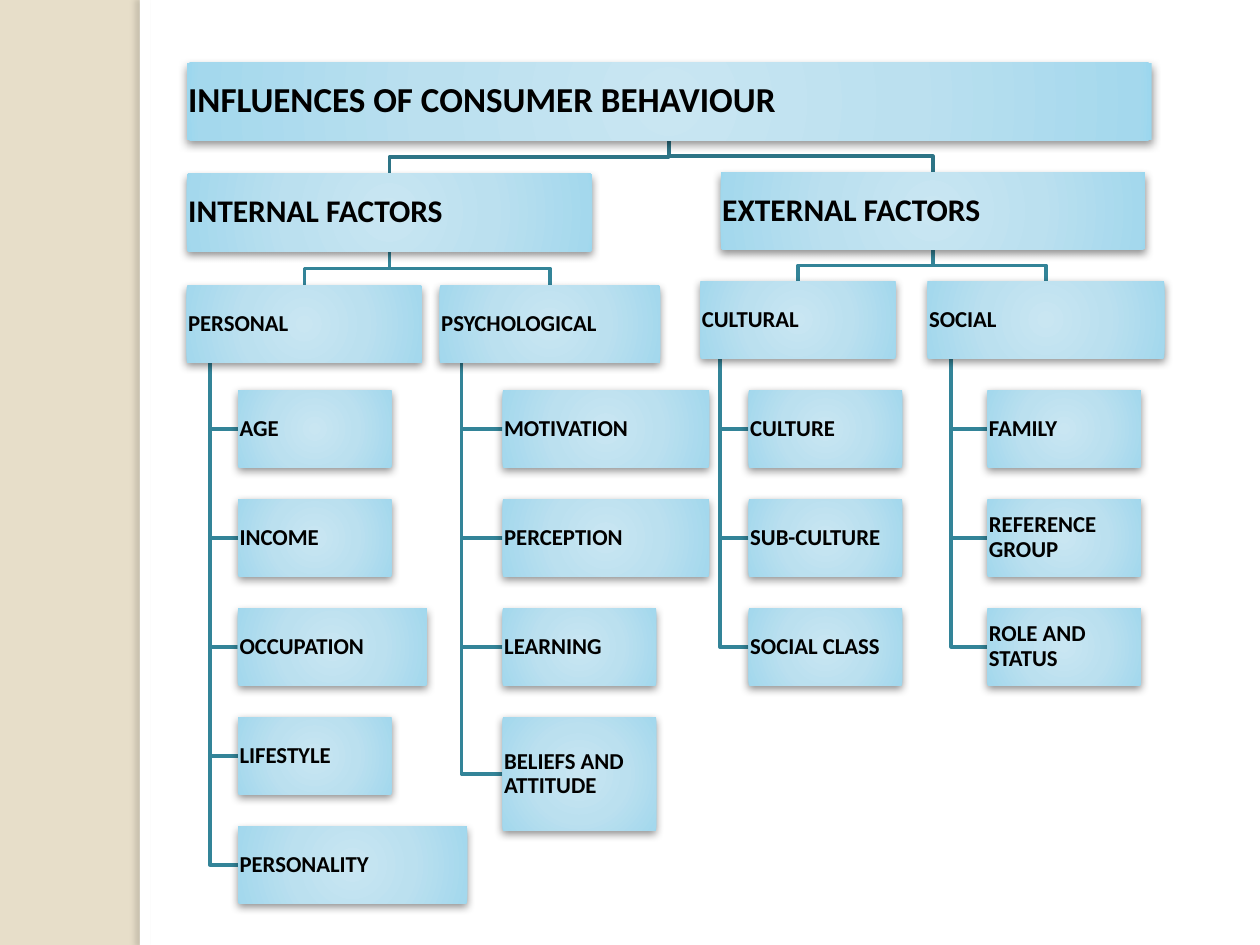
from pptx import Presentation
from pptx.dml.color import RGBColor
from pptx.enum.shapes import MSO_SHAPE
from pptx.enum.text import MSO_ANCHOR, PP_ALIGN
from pptx.oxml import parse_xml
from pptx.oxml.ns import nsdecls
from pptx.util import Pt

RECT = MSO_SHAPE.RECTANGLE
MIDDLE = MSO_ANCHOR.MIDDLE
LEFT = PP_ALIGN.LEFT

SAND = RGBColor(0xE7, 0xDE, 0xC9)
WHITE = RGBColor(0xFF, 0xFF, 0xFF)
BLACK = RGBColor(0x00, 0x00, 0x00)
STONE = RGBColor(0x73, 0x6F, 0x63)
TEAL = RGBColor(0x33, 0x84, 0x98)
DEEP = RGBColor(0x2D, 0x74, 0x86)
GLOW = [
    (0, RGBColor(0xC9, 0xE6, 0xF2)),
    (50, RGBColor(0xBB, 0xE0, 0xEF)),
    (97, RGBColor(0xA4, 0xD8, 0xED)),
    (100, RGBColor(0x9B, 0xD7, 0xEE)),
]

HIGH = 44.1       # height of a box
WIDE = 87.8       # usual width of a leaf
ROW, STEP = 223, 62.3

TOP = ("INFLUENCES OF CONSUMER BEHAVIOUR", 106.6, 36, 551.5)
# Group: text, left, top, width, heads
# Head: text, left, top, width, left of leaves, leaves
# Leaf: text, width, height
GROUPS = [
    ("INTERNAL FACTORS", 106.6, 99.4, 231.8, [
        ("PERSONAL", 106.6, 163.2, 134.6, 136, [
            ("AGE", WIDE, HIGH),
            ("INCOME", WIDE, HIGH),
            ("OCCUPATION", 108, HIGH),
            ("LIFESTYLE", WIDE, HIGH),
            ("PERSONALITY", 131, HIGH),
        ]),
        ("PSYCHOLOGICAL", 251.2, 163.2, 126, 287.2, [
            ("MOTIVATION", 118.1, HIGH),
            ("PERCEPTION", 118.1, HIGH),
            ("LEARNING", WIDE, HIGH),
            ("BELIEFS AND ATTITUDE", WIDE, 64.8),
        ]),
    ]),
    ("EXTERNAL FACTORS", 411.8, 98.5, 242.5, [
        ("CULTURAL", 400.2, 160.6, 111.6, 427.8, [
            ("CULTURE", WIDE, HIGH),
            ("SUB-CULTURE", WIDE, HIGH),
            ("SOCIAL CLASS", WIDE, HIGH),
        ]),
        ("SOCIAL", 530, 160.6, 135.4, 564.2, [
            ("FAMILY", WIDE, HIGH),
            ("REFERENCE GROUP", WIDE, HIGH),
            ("ROLE AND STATUS", WIDE, HIGH),
        ]),
    ]),
]


def cast(shape, color, alpha, blur, dist, angle):
    """Give the shape an outer shadow; alpha in percent, angle in degrees."""
    shape.shadow.inherit = False
    shape._element.spPr.find("{*}effectLst").append(parse_xml(
        f'<a:outerShdw {nsdecls("a")} blurRad="{Pt(blur)}" dist="{Pt(dist)}" '
        f'dir="{angle * 60000}" algn="ctr" rotWithShape="0">'
        f'<a:srgbClr val="{color}"><a:alpha val="{alpha * 1000}"/></a:srgbClr>'
        '</a:outerShdw>'))


def route(points, color):
    """Draw an open line through the points."""
    spots = [(Pt(x), Pt(y)) for x, y in points]
    pen = shapes.build_freeform(*spots[0])
    pen.add_line_segments(spots[1:], close=False)
    line = pen.convert_to_shape()
    line.fill.background()
    line.line.color.rgb = color
    line.line.width = Pt(2)
    line.shadow.inherit = False


deck = Presentation()
deck.slide_width, deck.slide_height = Pt(720), Pt(540)
slide = deck.slides.add_slide(deck.slide_layouts[6])
shapes = slide.shapes
slide.background.fill.solid()
slide.background.fill.fore_color.rgb = SAND

# White page with a shaded left edge
for width in (640, 5.8):
    page = shapes.add_shape(RECT, Pt(80), 0, Pt(width), Pt(540))
    page.fill.solid()
    page.fill.fore_color.rgb = WHITE
    page.line.fill.background()
    page.shadow.inherit = False
cast(page, STONE, 25, 3, 3, 180)

# Lines go behind the boxes, which are gathered on the way
text, left, top, width = TOP
boxes = [(text, left, top, width, HIGH, 20)]
root, base = left + width / 2, top + HIGH
for text, left, top, width, heads in GROUPS:
    boxes.append((text, left, top, width, HIGH, 18))
    mid, foot = left + width / 2, top + HIGH
    bend = (base + top) / 2
    route([(root, base), (root, bend), (mid, bend), (mid, top)], DEEP)
    for text, left, top, width, inset, leaves in heads:
        boxes.append((text, left, top, width, HIGH, 13))
        bend, end = (foot + top) / 2, left + width / 2
        route([(mid, foot), (mid, bend), (end, bend), (end, top)], TEAL)
        trunk = left + width / 10
        for i, (text, wide, high) in enumerate(leaves):
            row = ROW + i * STEP
            boxes.append((text, inset, row, wide, high, 13))
            y = row + high / 2
            route([(trunk, top + HIGH), (trunk, y), (inset, y)], TEAL)

stops = "".join(f'<a:gs pos="{pos * 1000}"><a:srgbClr val="{color}"/></a:gs>'
                for pos, color in GLOW)
for text, left, top, width, high, size in boxes:
    box = shapes.add_shape(RECT, Pt(left), Pt(top), Pt(width), Pt(high))
    box.line.fill.background()
    box._element.spPr.insert(2, parse_xml(
        f'<a:gradFill {nsdecls("a")} rotWithShape="1"><a:gsLst>{stops}</a:gsLst>'
        '<a:path path="circle"><a:fillToRect l="50000" t="50000" r="50000" '
        'b="50000"/></a:path></a:gradFill>'))
    cast(box, BLACK, 43, 5, 2, 90)
    frame = box.text_frame
    frame.word_wrap = True
    frame.vertical_anchor = MIDDLE
    frame.margin_left = frame.margin_right = Pt(0.9)
    frame.margin_top = frame.margin_bottom = Pt(0.9)
    para = frame.paragraphs[0]
    para.text = text
    para.alignment = LEFT
    para.line_spacing = 0.9
    para.font.name = "Calibri"
    para.font.size = Pt(size)
    para.font.bold = True
    para.font.color.rgb = BLACK

deck.save("out.pptx")
